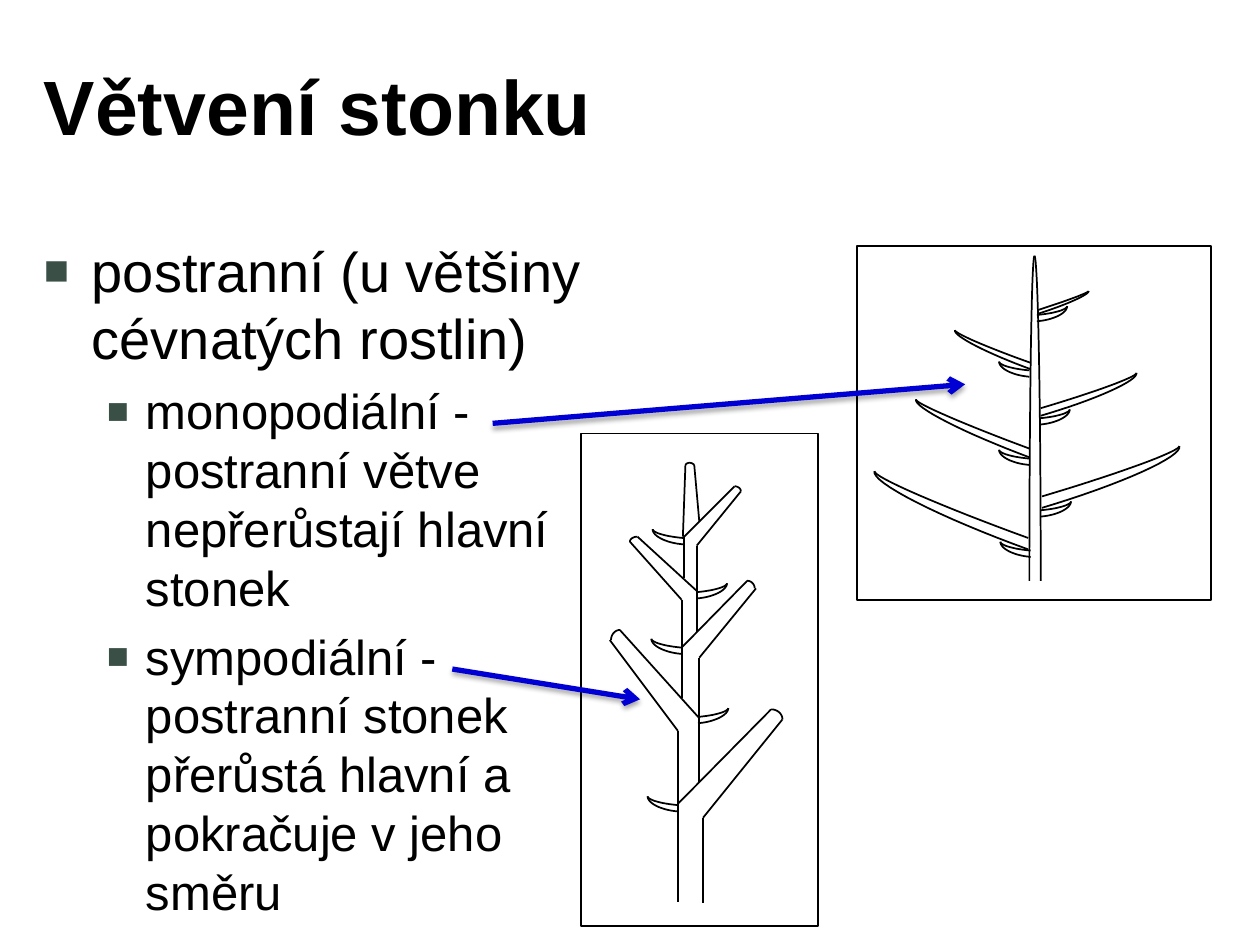
import math
from dataclasses import dataclass
from itertools import pairwise

from lxml import etree
from pptx import Presentation
from pptx import util as u
from pptx.dml.color import RGBColor
from pptx.enum import shapes, text
from pptx.oxml import parse_xml
from pptx.oxml.ns import nsdecls, qn


@dataclass(frozen=True)
class Theme:
    font: str = "Arial"
    ink: str = "000000"
    paper: str = "FFFFFF"
    bullet: str = "3A5047"
    arrow: str = "0000D4"
    title: int = 44
    levels: tuple = (32, 28)
    indents: tuple = ((0.38, -0.38), (0.81, -0.31))
    thin: int = 1
    thick: int = 3


COLUMNS, ROWS = 10, 7.5
ARC_STEPS = 16


class SlideBuilder:
    def __init__(self, deck, theme):
        self.theme = theme
        self.cell_width = deck.slide_width / COLUMNS
        self.cell_height = deck.slide_height / ROWS
        self.page = deck.slides.add_slide(deck.slide_layouts[6])
        self.shapes = self.page.shapes

    def place(self, *lengths):
        """Turn alternating column and row values into slide lengths."""
        cells = (self.cell_width, self.cell_height)
        return [u.Emu(round(value * cells[i % 2])) for i, value in enumerate(lengths)]

    def start_group(self):
        self.shapes = self.page.shapes.add_group_shape().shapes

    def end_group(self):
        self.shapes = self.page.shapes

    def stroke(self, line, color, width):
        line.color.rgb = RGBColor.from_string(color)
        line.width = u.Pt(width)

    def text_box(self, area, anchor):
        frame = self.shapes.add_textbox(*self.place(*area)).text_frame
        frame.word_wrap = True
        frame.vertical_anchor = anchor
        return frame

    def style(self, para, size, bold=False):
        for span in para.runs:
            span.font.name = self.theme.font
            span.font.size = u.Pt(size)
            span.font.bold = bold
            span.font.color.rgb = RGBColor.from_string(self.theme.ink)

    def title(self, area, words):
        frame = self.text_box(area, text.MSO_ANCHOR.MIDDLE)
        frame.text = words
        self.style(frame.paragraphs[0], self.theme.title, bold=True)

    def bullets(self, area, items):
        frame = self.text_box(area, text.MSO_ANCHOR.TOP)
        frame.text = "\n".join(words for _, words in items)
        for i, (para, (level, _)) in enumerate(zip(frame.paragraphs, items)):
            size = self.theme.levels[level]
            para.level = level
            para.space_before = u.Pt(0.2 * size if i else 0)
            self.add_bullet(para, *self.theme.indents[level])
            self.style(para, size)

    def add_bullet(self, para, margin, indent):
        props = para._p.get_or_add_pPr()
        props.set("marL", str(u.Inches(margin)))
        props.set("indent", str(u.Inches(indent)))
        color = etree.SubElement(props, qn("a:buClr"))
        etree.SubElement(color, qn("a:srgbClr"), val=self.theme.bullet)
        etree.SubElement(props, qn("a:buSzPct"), val="75000")
        etree.SubElement(props, qn("a:buFont"), typeface=self.theme.font)
        etree.SubElement(props, qn("a:buChar"), char="■")

    def panel(self, area):
        box = self.shapes.add_shape(shapes.MSO_SHAPE.RECTANGLE, *self.place(*area))
        box.shadow.inherit = False
        box.fill.solid()
        box.fill.fore_color.rgb = RGBColor.from_string(self.theme.paper)
        self.stroke(box.line, self.theme.ink, self.theme.thin)

    def connector(self, start, end, color, width):
        line = self.shapes.add_connector(
            shapes.MSO_CONNECTOR.STRAIGHT, *self.place(*start, *end))
        self.stroke(line.line, color, width)
        effects = etree.SubElement(line._element.spPr, qn("a:effectLst"))
        return line, effects

    def chain(self, *points):
        for start, end in pairwise(points):
            self.connector(start, end, self.theme.ink, self.theme.thin)

    def arrow(self, start, end):
        line, effects = self.connector(start, end, self.theme.arrow, self.theme.thick)
        etree.SubElement(line.line._get_or_add_ln(), qn("a:tailEnd"), type="arrow")
        effects.append(parse_xml(
            f'<a:outerShdw {nsdecls("a")} blurRad="{u.Pt(3.1)}" dist="{u.Pt(1.8)}" '
            f'dir="5400000" rotWithShape="0"><a:srgbClr val="{self.theme.ink}">'
            '<a:alpha val="35000"/></a:srgbClr></a:outerShdw>'))

    def arc(self, start, end, centre):
        """Draw a quarter of the (skewed) ellipse around centre, from start to end."""
        points = []
        for step in range(ARC_STEPS + 1):
            angle = math.pi / 2 * step / ARC_STEPS
            points.append(self.place(*(
                c + (s - c) * math.cos(angle) + (e - c) * math.sin(angle)
                for s, e, c in zip(start, end, centre))))
        builder = self.shapes.build_freeform(*points[0])
        builder.add_line_segments(points[1:], close=False)
        curve = builder.convert_to_shape()
        curve.shadow.inherit = False
        curve.fill.background()
        self.stroke(curve.line, self.theme.ink, self.theme.thin)

    def leaf(self, tip, side):
        """Draw a small leaf; side is 1 when the stem is to its right, else -1."""
        x, y = tip
        base = x + 0.24 * side
        for drop in (0.07, 0.12):
            self.arc(tip, (base, y + drop), (base, y + 0.02))


STEM_FOOT = (8.21, 4.61)
STEM_TOP = (8.21, 2.03)
STEM_SIDES = [(8.17, 4.61), (8.26, 4.61)]

# Tip, then end and centre of the lower edge, end and centre of the upper edge
BRANCHES = [
    ((6.94, 3.74), (8.16, 4.36), (8.21, 4.2), (8.16, 4.27), (8.18, 4.19)),
    ((9.36, 3.54), (8.27, 4.03), (8.22, 3.88), (8.27, 3.94), (8.25, 3.87)),
    ((7.58, 2.62), (8.18, 2.93), (8.21, 2.85), (8.18, 2.88), (8.2, 2.84)),
    ((7.27, 3.17), (8.17, 3.63), (8.21, 3.52), (8.17, 3.56), (8.19, 3.51)),
    ((9.02, 2.96), (8.26, 3.3), (8.23, 3.19), (8.26, 3.24), (8.24, 3.19)),
    ((8.64, 2.31), (8.24, 2.49), (8.23, 2.44), (8.24, 2.46), (8.23, 2.44)),
]
MONOPODIAL_LEAVES = {
    1: [(7.93, 2.87), (7.93, 3.57), (7.94, 4.3)],
    -1: [(8.47, 2.43), (8.49, 3.25), (8.5, 3.98)],
}

# Outlines of the successive shoots, from the foot to the top
SHOOT_EDGES = [
    [(6.21, 5.71), (5.58, 6.49), (5.58, 7.17)],
    [(6.12, 5.63), (5.38, 6.38), (5.38, 7.16)],
    [(4.84, 5.08), (5.38, 5.8), (5.38, 6.42)],
    [(4.92, 5), (5.55, 5.7), (5.55, 6.21)],
    [(6, 4.67), (5.55, 5.22), (5.55, 5.7)],
    [(5.93, 4.61), (5.41, 5.14), (5.41, 5.54)],
    [(5, 4.3), (5.41, 4.76), (5.41, 5.15)],
    [(5.06, 4.26), (5.53, 4.69), (5.53, 5.02)],
    [(5.88, 3.9), (5.53, 4.33), (5.53, 4.69)],
    [(5.83, 3.86), (5.43, 4.26), (5.43, 4.59)],
    [(5.44, 3.69), (5.42, 4.26)],
    [(5.51, 3.69), (5.55, 4.14)],
]
SHOOT_CAPS = [
    ((6.12, 5.63), (6.21, 5.71), (6.12, 5.71)),
    ((4.92, 5), (4.85, 5.08), (4.92, 5.08)),
    ((5.93, 4.61), (5.99, 4.67), (5.93, 4.67)),
    ((5.06, 4.26), (5, 4.3), (5.06, 4.3)),
    ((5.83, 3.86), (5.88, 3.9), (5.83, 3.9)),
    ((5.51, 3.69), (5.44, 3.69), (5.48, 3.73)),
]
SYMPODIAL_LEAVES = {
    1: [(5.14, 6.32), (5.17, 5.07), (5.18, 4.2)],
    -1: [(5.78, 5.62), (5.77, 4.63)],
}


def draw_leaves(slide, leaves):
    for side, tips in leaves.items():
        for tip in tips:
            slide.leaf(tip, side)


def draw_monopodial(slide):
    slide.start_group()
    slide.panel((6.8, 1.95, 2.81, 2.81))
    for side in STEM_SIDES:
        slide.arc(STEM_TOP, side, STEM_FOOT)
    for tip, low_end, low_centre, high_end, high_centre in BRANCHES:
        slide.arc(tip, low_end, low_centre)
        slide.arc(tip, high_end, high_centre)
    draw_leaves(slide, MONOPODIAL_LEAVES)
    slide.end_group()


def draw_sympodial(slide):
    slide.start_group()
    slide.panel((4.61, 3.44, 1.88, 3.91))
    for edge in SHOOT_EDGES:
        slide.chain(*edge)
    for cap in SHOOT_CAPS:
        slide.arc(*cap)
    draw_leaves(slide, SYMPODIAL_LEAVES)
    slide.end_group()


def main():
    deck = Presentation()
    deck.slide_width, deck.slide_height = u.Inches(10), u.Inches(7.5)
    slide = SlideBuilder(deck, Theme())
    slide.title((0.25, 0.17, 9.5, 1.33), "Větvení stonku")
    slide.bullets((0.25, 1.83, 4.91, 5.5), [
        (0, "postranní (u většiny cévnatých rostlin)"),
        (1, "monopodiální - postranní větve nepřerůstají hlavní stonek"),
        (1, "sympodiální - postranní stonek přerůstá hlavní a pokračuje v jeho směru"),
    ])
    draw_monopodial(slide)
    draw_sympodial(slide)
    slide.arrow((3.91, 3.36), (7.66, 3.05))
    slide.arrow((3.59, 5.31), (5.08, 5.55))
    deck.save("out.pptx")


if __name__ == "__main__":
    main()
